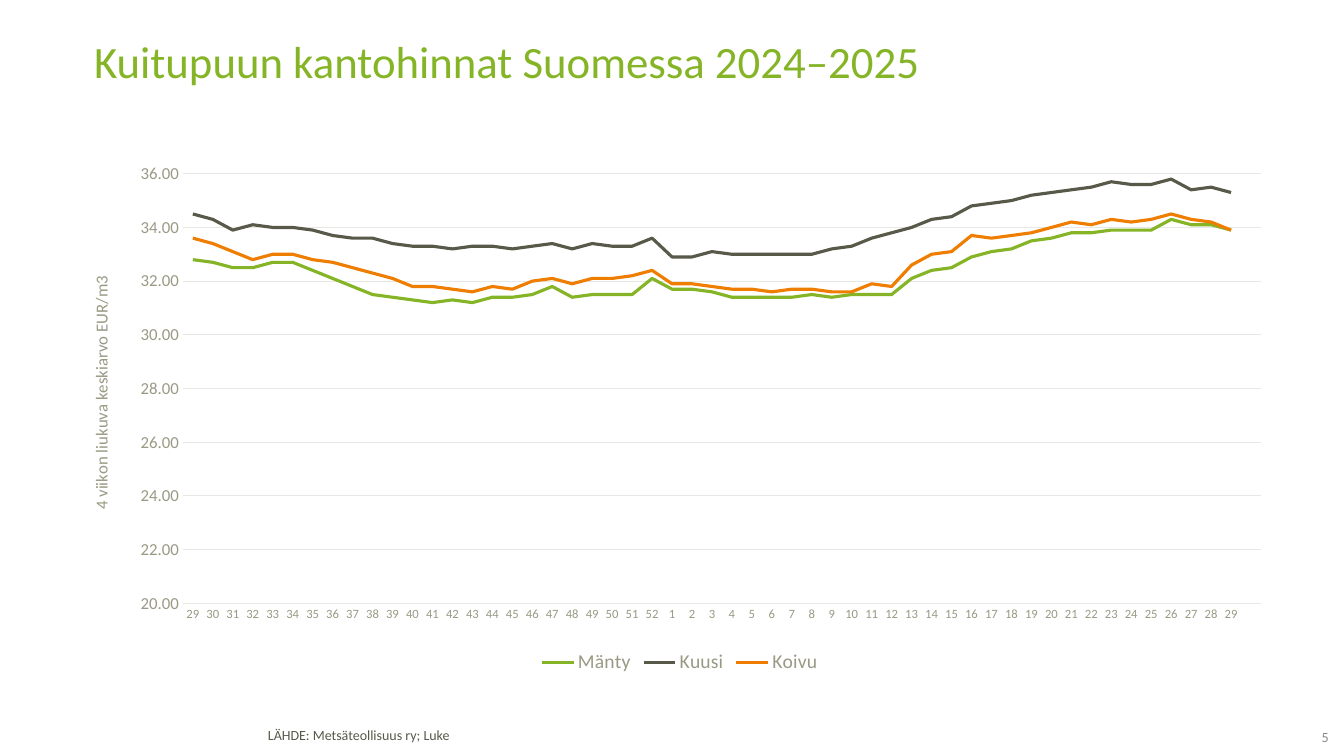
from dataclasses import dataclass
from typing import Any

from lxml.etree import SubElement
from pptx import Presentation
from pptx.chart.chart import Chart
from pptx.chart.data import CategoryChartData
from pptx.dml.color import RGBColor
from pptx.dml.line import LineFormat
from pptx.enum.chart import XL_CHART_TYPE, XL_LEGEND_POSITION, XL_TICK_MARK
from pptx.enum.text import MSO_ANCHOR, MSO_AUTO_SIZE, PP_ALIGN
from pptx.oxml.ns import qn
from pptx.slide import Slide
from pptx.text.text import Font
from pptx.util import Pt

GREEN = RGBColor(0x85, 0xB5, 0x26)
DARK = RGBColor(0x59, 0x59, 0x4A)
ORANGE = RGBColor(0xEF, 0x7D, 0x00)
LABEL = RGBColor(0x99, 0x99, 0x84)
GRID = RGBColor(0xE7, 0xE7, 0xE3)
SOURCE = RGBColor(0x58, 0x59, 0x4A)
GREY = RGBColor(0x87, 0x87, 0x87)
FONT_NAME = "Calibri"
PLOT_AREA = {"x": 0.083, "y": 0.03, "w": 0.905, "h": 0.826}


@dataclass(frozen=True)
class PriceSeries:
    name: str
    color: RGBColor
    prices: tuple[float, ...]


@dataclass(frozen=True)
class Caption:
    text: str
    box: tuple[float, float, float, float]
    color: RGBColor
    frame_format: dict[str, Any]
    paragraph_format: dict[str, Any]


PRICE_SERIES = (
    PriceSeries("Mänty", GREEN, (
        32.8, 32.7, 32.5, 32.5, 32.7, 32.7, 32.4, 32.1, 31.8, 31.5, 31.4, 31.3,
        31.2, 31.3, 31.2, 31.4, 31.4, 31.5, 31.8, 31.4, 31.5, 31.5, 31.5, 32.1,
        31.7, 31.7, 31.6, 31.4, 31.4, 31.4, 31.4, 31.5, 31.4, 31.5, 31.5, 31.5,
        32.1, 32.4, 32.5, 32.9, 33.1, 33.2, 33.5, 33.6, 33.8, 33.8, 33.9, 33.9,
        33.9, 34.3, 34.1, 34.1, 33.9)),
    PriceSeries("Kuusi", DARK, (
        34.5, 34.3, 33.9, 34.1, 34, 34, 33.9, 33.7, 33.6, 33.6, 33.4, 33.3,
        33.3, 33.2, 33.3, 33.3, 33.2, 33.3, 33.4, 33.2, 33.4, 33.3, 33.3, 33.6,
        32.9, 32.9, 33.1, 33, 33, 33, 33, 33, 33.2, 33.3, 33.6, 33.8,
        34, 34.3, 34.4, 34.8, 34.9, 35, 35.2, 35.3, 35.4, 35.5, 35.7, 35.6,
        35.6, 35.8, 35.4, 35.5, 35.3)),
    PriceSeries("Koivu", ORANGE, (
        33.6, 33.4, 33.1, 32.8, 33, 33, 32.8, 32.7, 32.5, 32.3, 32.1, 31.8,
        31.8, 31.7, 31.6, 31.8, 31.7, 32, 32.1, 31.9, 32.1, 32.1, 32.2, 32.4,
        31.9, 31.9, 31.8, 31.7, 31.7, 31.6, 31.7, 31.7, 31.6, 31.6, 31.9, 31.8,
        32.6, 33, 33.1, 33.7, 33.6, 33.7, 33.8, 34, 34.2, 34.1, 34.3, 34.2,
        34.3, 34.5, 34.3, 34.2, 33.9)),
)

CAPTIONS = (
    Caption("LÄHDE: Metsäteollisuus ry; Luke", (184.3, 517, 517, 19.5), SOURCE,
            {"word_wrap": True}, {"line_spacing": 0.85}),
    Caption("5", (911, 521.3, 38, 13.7), GREY,
            {"word_wrap": True, "vertical_anchor": MSO_ANCHOR.MIDDLE,
             "margin_left": 0, "margin_right": 0, "margin_top": 0,
             "margin_bottom": Pt(2.9)},
            {"alignment": PP_ALIGN.RIGHT}),
)


def apply_format(target: Any, values: dict[str, Any]) -> None:
    for name, value in values.items():
        setattr(target, name, value)


def format_font(font: Font, size: float, color: RGBColor) -> None:
    apply_format(font, {"name": FONT_NAME, "size": Pt(size), "bold": False})
    font.color.rgb = color


def format_line(line: LineFormat, width: float, color: RGBColor) -> None:
    line.color.rgb = color
    line.width = Pt(width)


def set_title(slide: Slide, text: str) -> None:
    title = slide.shapes.title
    apply_format(title, {"left": Pt(60), "top": Pt(28),
                         "width": Pt(842), "height": Pt(70.5)})
    apply_format(title.text_frame, {"text": text, "word_wrap": True,
                                    "auto_size": MSO_AUTO_SIZE.NONE,
                                    "vertical_anchor": MSO_ANCHOR.TOP})
    paragraph = title.text_frame.paragraphs[0]
    apply_format(paragraph, {"alignment": PP_ALIGN.LEFT, "line_spacing": 0.8})
    format_font(paragraph.runs[0].font, 32, GREEN)


def add_caption(slide: Slide, caption: Caption) -> None:
    frame = slide.shapes.add_textbox(*map(Pt, caption.box)).text_frame
    apply_format(frame, {"text": caption.text, **caption.frame_format})
    paragraph = frame.paragraphs[0]
    apply_format(paragraph, caption.paragraph_format)
    format_font(paragraph.runs[0].font, 10, caption.color)


def fix_plot_area(chart: Chart) -> None:
    """Place the inner plot area by fractions of the chart size."""
    plot_area = chart._chartSpace.chart.plotArea
    for old_layout in plot_area.findall(qn("c:layout")):
        plot_area.remove(old_layout)
    layout = SubElement(plot_area, qn("c:layout"))
    plot_area.insert(0, layout)
    manual = SubElement(layout, qn("c:manualLayout"))
    settings = {"layoutTarget": "inner", "xMode": "edge", "yMode": "edge", **PLOT_AREA}
    for name, value in settings.items():
        SubElement(manual, qn(f"c:{name}")).set("val", str(value))


def format_axes(chart: Chart) -> None:
    week_axis, price_axis = chart.category_axis, chart.value_axis
    for axis, size in ((week_axis, 9), (price_axis, 12)):
        apply_format(axis, {"major_tick_mark": XL_TICK_MARK.NONE,
                            "minor_tick_mark": XL_TICK_MARK.NONE})
        format_font(axis.tick_labels.font, size, LABEL)
    format_line(week_axis.format.line, 0.75, GRID)
    apply_format(price_axis, {"minimum_scale": 20, "maximum_scale": 36,
                              "major_unit": 2, "has_major_gridlines": True})
    apply_format(price_axis.tick_labels, {"number_format": "#,##0.00",
                                          "number_format_is_linked": False})
    price_axis.format.line.fill.background()
    format_line(price_axis.major_gridlines.format.line, 0.75, GRID)
    title_frame = price_axis.axis_title.text_frame
    title_frame.text = "4 viikon liukuva keskiarvo EUR/m3"
    format_font(title_frame.paragraphs[0].runs[0].font, 12, LABEL)


def add_price_chart(slide: Slide) -> None:
    data = CategoryChartData(number_format="0.0")
    weeks = (*range(29, 53), *range(1, 30))
    data.categories = [*map(str, weeks), ""]
    for item in PRICE_SERIES:
        data.add_series(item.name, (*item.prices, None))
    chart = slide.shapes.add_chart(XL_CHART_TYPE.LINE, Pt(60), Pt(113),
                                   Pt(851), Pt(371.5), data).chart
    format_font(chart.font, 10, DARK)
    apply_format(chart, {"has_title": False, "has_legend": True})
    apply_format(chart.legend, {"position": XL_LEGEND_POSITION.BOTTOM,
                                "include_in_layout": False})
    format_font(chart.legend.font, 14, LABEL)
    chart.plots[0].vary_by_categories = False
    for series, item in zip(chart.plots[0].series, PRICE_SERIES):
        series.smooth = False
        format_line(series.format.line, 2.25, item.color)
    format_axes(chart)
    fix_plot_area(chart)


def main() -> None:
    presentation = Presentation()
    apply_format(presentation, {"slide_width": Pt(960), "slide_height": Pt(540)})
    slide = presentation.slides.add_slide(presentation.slide_layouts[5])
    set_title(slide, "Kuitupuun kantohinnat Suomessa 2024–2025")
    add_price_chart(slide)
    for caption in CAPTIONS:
        add_caption(slide, caption)
    presentation.save("out.pptx")


if __name__ == "__main__":
    main()
